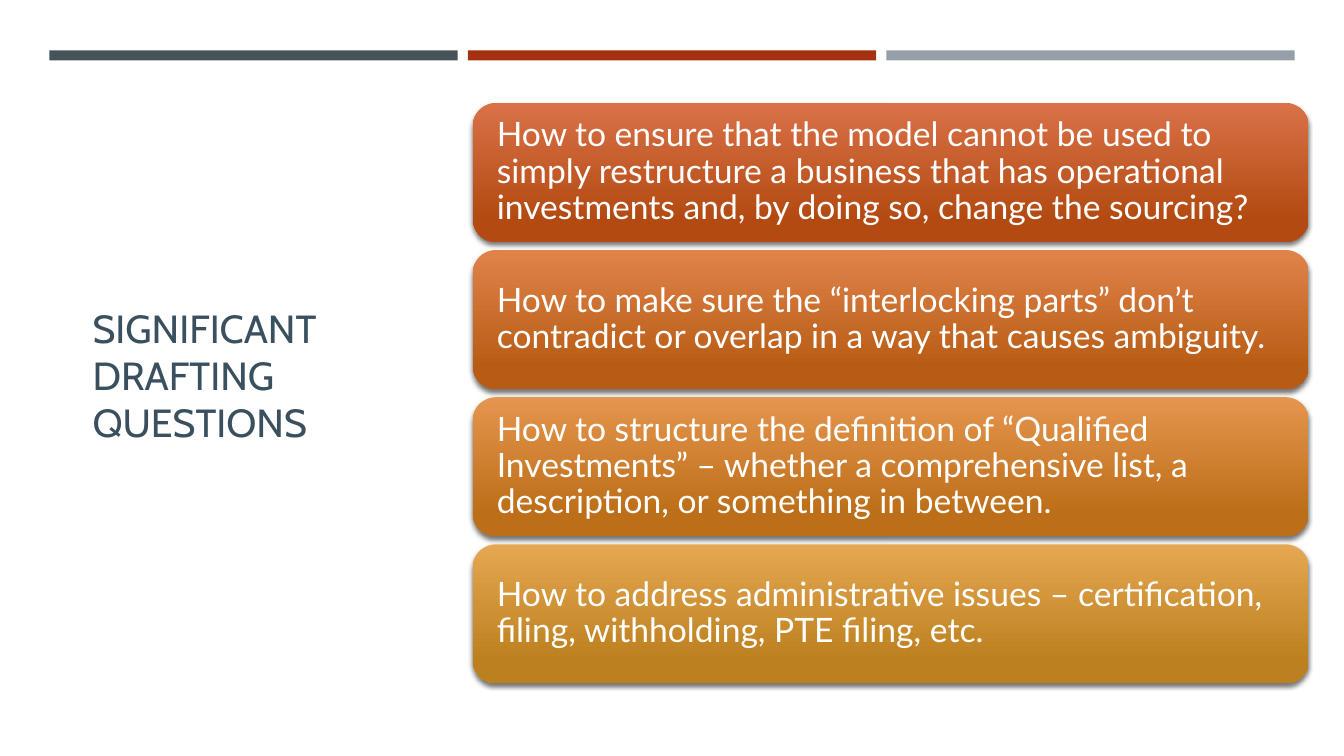
import pptx
import pptx.util
import pptx.dml.color
import pptx.enum.shapes
import pptx.enum.text
import pptx.oxml

# Content
TITLE = "SIGNIFICANT DRAFTING QUESTIONS"
BAR_COLORS = ["465359", "A5300F", "969FA7"]
QUESTIONS = [  # text, gradient top, gradient bottom
    ("How to ensure that the model cannot be used to simply restructure a business that has "
     "operational investments and, by doing so, change the sourcing?", "DA7148", "B34A12"),
    ("How to make sure the “interlocking parts” don’t contradict or overlap in a way that "
     "causes ambiguity.", "E0834A", "B85C15"),
    ("How to structure the definition of “Qualified Investments” – whether a comprehensive "
     "list, a description, or something in between.", "E5954D", "BD6E18"),
    ("How to address administrative issues – certification, filing, withholding, PTE filing, "
     "etc.", "E5A751", "BD801F"),
]

# Grid, in inches
BAR_LEFT, BAR_TOP, BAR_W, BAR_H, BAR_STEP = 0.49, 0.5, 4.05, 0.1, 4.15
CARD_LEFT, CARD_TOP, CARD_W, CARD_H, CARD_STEP = 4.69, 1.02, 8.29, 1.38, 1.46
CARD_INSET = 0.17
TITLE_BOX = (0.82, 1.14, 3.34, 5.15)

SHADOW = (
    '<a:outerShdw xmlns:a="http://schemas.openxmlformats.org/drawingml/2006/main" '
    'blurRad="38100" dist="25400" dir="5400000" rotWithShape="0">'
    '<a:srgbClr val="000000"><a:alpha val="55000"/></a:srgbClr></a:outerShdw>'
)
SHAPES = pptx.enum.shapes.MSO_SHAPE


def rgb(value):
    return pptx.dml.color.RGBColor.from_string(value)


def inches(*values):
    return [pptx.util.Inches(v) for v in values]


def add_block(slide, kind, *box):
    sp = slide.shapes.add_shape(kind, *inches(*box))
    sp.shadow.inherit = False
    sp.line.fill.background()
    return sp


def write(sp, text, font, size, color):
    tf = sp.text_frame
    tf.word_wrap = True
    tf.vertical_anchor = pptx.enum.text.MSO_ANCHOR.MIDDLE
    p = tf.paragraphs[0]
    p.text = text
    p.alignment = pptx.enum.text.PP_ALIGN.LEFT
    p.font.name = font
    p.font.size = pptx.util.Pt(size)
    p.font.color.rgb = rgb(color)
    return tf


def add_card(slide, row, text, top_color, bottom_color):
    sp = add_block(slide, SHAPES.ROUNDED_RECTANGLE,
                   CARD_LEFT, CARD_TOP + row * CARD_STEP, CARD_W, CARD_H)
    sp.fill.gradient()
    sp.fill.gradient_angle = 270  # top to bottom
    stops = zip(sp.fill.gradient_stops, (0, 0.84), (top_color, bottom_color))
    for stop, position, color in stops:
        stop.position = position
        stop.color.rgb = rgb(color)
    effects = sp._element.spPr.find(pptx.oxml.ns.qn("a:effectLst"))
    effects.append(pptx.oxml.parse_xml(SHADOW))

    tf = write(sp, text, "Lato", 24, "FFFFFF")
    tf.margin_left, tf.margin_top, tf.margin_right, tf.margin_bottom = inches(*[CARD_INSET] * 4)
    tf.paragraphs[0].line_spacing = 0.9


def main():
    prs = pptx.Presentation()
    prs.slide_width, prs.slide_height = inches(13.33, 7.5)
    s = prs.slides.add_slide(prs.slide_layouts[6])

    # Bars across the top
    for col, color in enumerate(BAR_COLORS):
        bar = add_block(s, SHAPES.RECTANGLE, BAR_LEFT + col * BAR_STEP, BAR_TOP, BAR_W, BAR_H)
        bar.fill.solid()
        bar.fill.fore_color.rgb = rgb(color)

    # Title at the left
    write(s.shapes.add_textbox(*inches(*TITLE_BOX)), TITLE, "Cabin", 28, "3B505F")

    # Question cards
    for row, question in enumerate(QUESTIONS):
        add_card(s, row, *question)

    prs.save("out.pptx")


if __name__ == "__main__":
    main()
